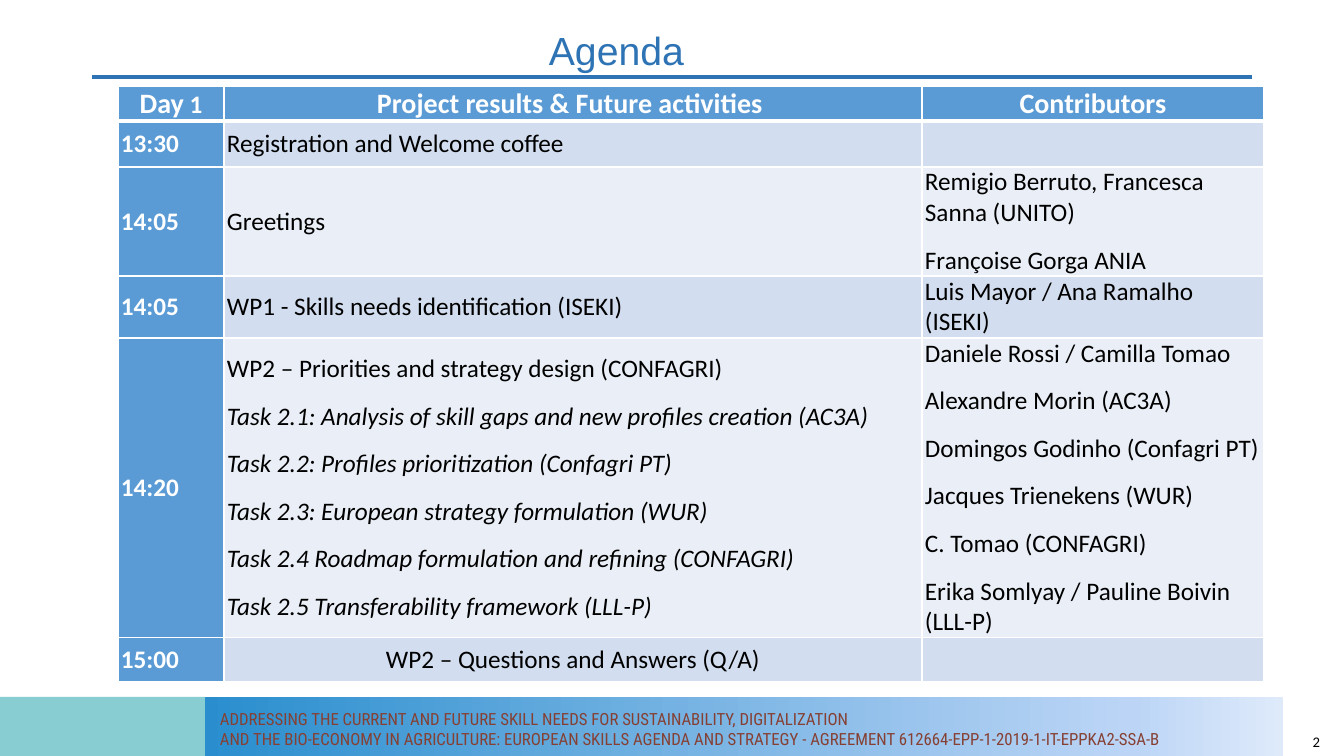
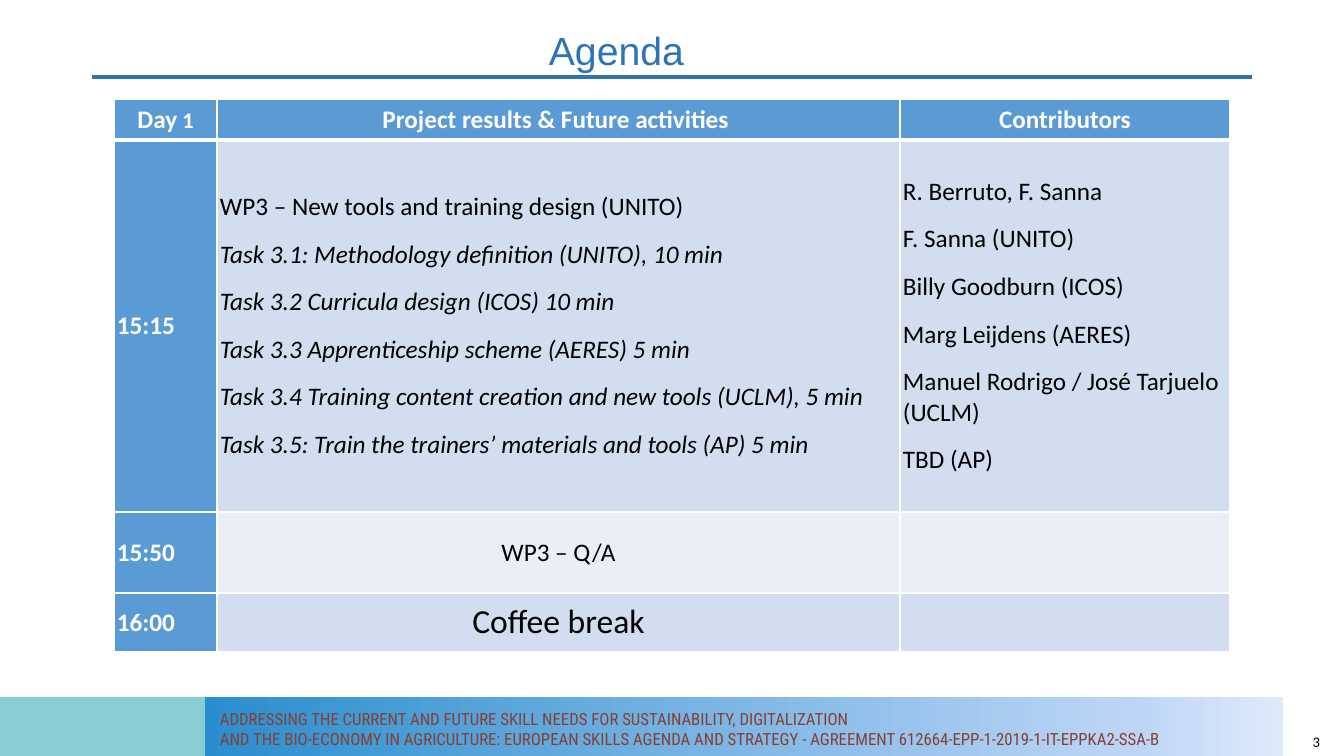
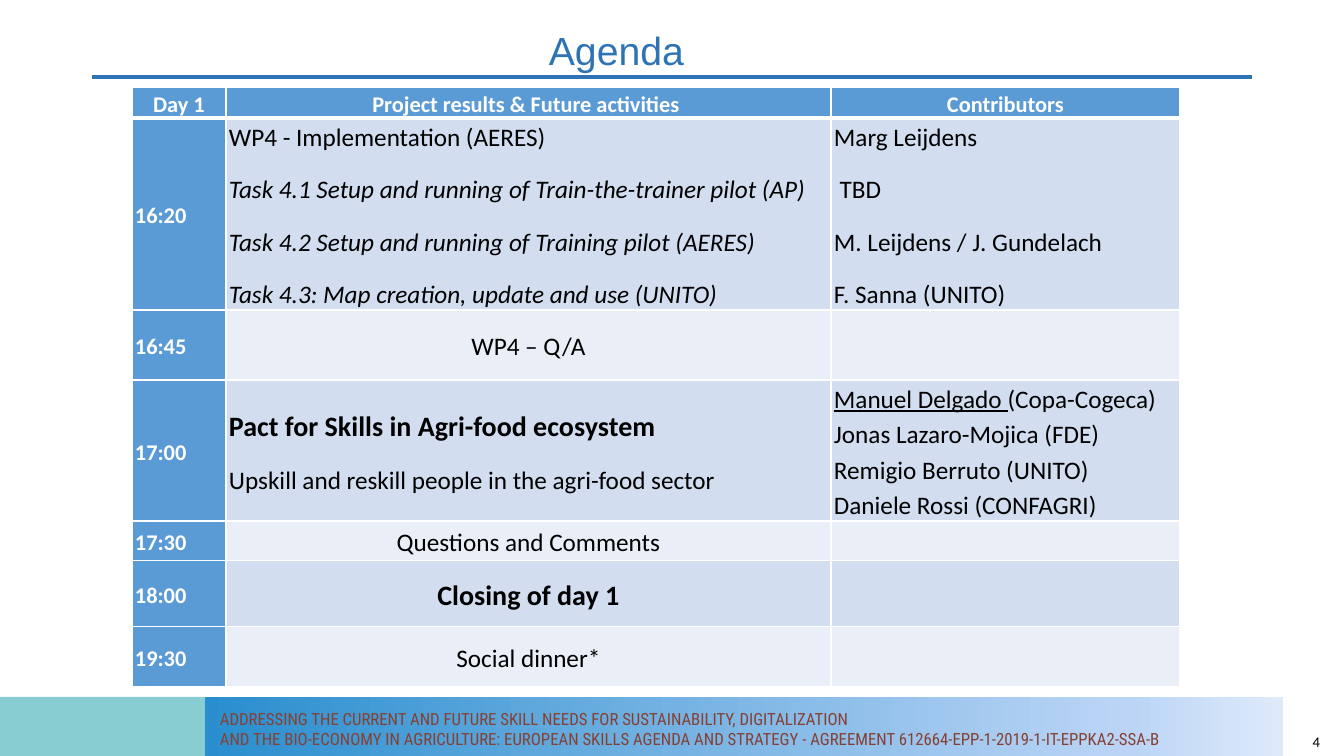
from dataclasses import dataclass

from lxml import etree
from pptx import Presentation
from pptx.dml.color import RGBColor
from pptx.enum.shapes import MSO_CONNECTOR, MSO_SHAPE
from pptx.enum.text import MSO_ANCHOR, PP_ALIGN
from pptx.oxml.ns import qn
from pptx.util import Emu, Pt

RECTANGLE = MSO_SHAPE.RECTANGLE
STRAIGHT = MSO_CONNECTOR.STRAIGHT
LEFT, CENTER, RIGHT = PP_ALIGN.LEFT, PP_ALIGN.CENTER, PP_ALIGN.RIGHT
TOP, MIDDLE = MSO_ANCHOR.TOP, MSO_ANCHOR.MIDDLE

EMU_PER_PX = 914400 / 100.8
SLIDE_SIZE = (1344, 756)
COLORS = {
    "title": "2E74B5",
    "teal": "87CDD1",
    "footer_text": "864033",
    "header": "5B9BD5",
    "band_dark": "D2DEEF",
    "band_light": "EAEFF7",
    "white": "FFFFFF",
    "black": "000000",
}
FOOTER_GRADIENT = [(0, "2A8ECE"), (86, "BCD5F6"), (100, "DEEAFA")]
FOOTER_LINES = [
    "ADDRESSING THE CURRENT AND FUTURE SKILL NEEDS FOR SUSTAINABILITY, DIGITALIZATION",
    "AND THE BIO-ECONOMY IN AGRICULTURE: EUROPEAN SKILLS AGENDA AND STRATEGY"
    " - AGREEMENT 612664-EPP-1-2019-1-IT-EPPKA2-SSA-B",
]
BODY_FONT = "Calibri"
PARAGRAPH_GAP = 12
CELL_MARGIN = 3
HANGING_INDENT = 58


@dataclass
class Line:
    """One paragraph of a table cell, with an optional plain tail."""
    text: str
    size: float = 18
    bold: bool = False
    italic: bool = False
    underline: bool = False
    tail: str = ""
    tail_size: float = 18
    tight: bool = False


@dataclass
class Session:
    """One agenda row."""
    height: int
    time: str
    topics: list
    people: list
    centered: bool = False


@dataclass
class Agenda:
    """One agenda table."""
    left: int
    top: int
    columns: list
    header_height: int
    header_size: float
    day_number_size: float
    time_size: float
    sessions: list
    line_spacing: float = 1.0
    header_anchor: int = MIDDLE


def px(length):
    return Emu(round(length * EMU_PER_PX))


def rgb(name):
    return RGBColor.from_string(COLORS[name])


def lines(*texts):
    return [Line(text) for text in texts]


def tasks(heading, *texts):
    return [Line(heading)] + [Line(text, italic=True) for text in texts]


def break_row(height, time, text, **style):
    return Session(height, time, [Line(text, **style)], [], centered=True)


# Shared frame
def add_text(slide, box, texts, font, size, color, align=LEFT, anchor=TOP, spacing=1.0):
    shape = slide.shapes.add_textbox(*map(px, box))
    frame = shape.text_frame
    frame.word_wrap = True
    frame.vertical_anchor = anchor
    frame.text = "\n".join(texts)
    for paragraph in frame.paragraphs:
        paragraph.alignment = align
        paragraph.line_spacing = spacing
        for run in paragraph.runs:
            run.font.name = font
            run.font.size = Pt(size)
            run.font.color.rgb = rgb(color)


def add_band(slide, box):
    shape = slide.shapes.add_shape(RECTANGLE, *map(px, box))
    shape.shadow.inherit = False
    shape.line.fill.background()
    return shape


def set_gradient(shape, stops):
    shape.fill.gradient()
    shape.fill.gradient_angle = 0
    stop_list = shape._element.spPr.find(".//" + qn("a:gsLst"))
    for stop in list(stop_list):
        stop_list.remove(stop)
    for percent, color in stops:
        stop = etree.SubElement(stop_list, qn("a:gs"), pos=str(percent * 1000))
        etree.SubElement(stop, qn("a:srgbClr"), val=color)


def add_frame(slide, number):
    rule = slide.shapes.add_connector(STRAIGHT, px(92), px(77), px(1252), px(77))
    rule.line.color.rgb = rgb("title")
    rule.line.width = Pt(2.25)
    etree.SubElement(rule._element.spPr, qn("a:effectLst"))

    teal_band = add_band(slide, (0, 697, 205, 59))
    teal_band.fill.solid()
    teal_band.fill.fore_color.rgb = rgb("teal")
    set_gradient(add_band(slide, (205, 697, 1078, 59)), FOOTER_GRADIENT)
    add_text(slide, (210, 704, 1074, 50), FOOTER_LINES,
             "Roboto Condensed", 12, "footer_text")

    add_text(slide, (539, 27, 568, 59), ["Agenda"], "Arial", 28, "title", spacing=0.9)
    add_text(slide, (1028, 729, 302, 25), [str(number)], BODY_FONT, 10.5, "black",
             align=RIGHT, anchor=MIDDLE)


# Agenda table
def set_borders(cell, top, bottom):
    properties = cell._tc.get_or_add_tcPr()
    for side, width in (("L", 1), ("R", 1), ("T", top), ("B", bottom)):
        border = etree.SubElement(properties, qn("a:ln" + side), w=str(Pt(width)))
        fill = etree.SubElement(border, qn("a:solidFill"))
        etree.SubElement(fill, qn("a:srgbClr"), val=COLORS["white"])


def format_run(run, line, size, color):
    run.font.name = BODY_FONT
    run.font.size = Pt(size)
    run.font.bold = line.bold
    run.font.italic = line.italic
    run.font.color.rgb = rgb(color)


def fill_cell(cell, content, fill, color, align, spacing, anchor=MIDDLE, hanging=False):
    cell.fill.solid()
    cell.fill.fore_color.rgb = rgb(fill)
    cell.margin_left = cell.margin_right = px(CELL_MARGIN)
    cell.margin_top = cell.margin_bottom = 0
    cell.vertical_anchor = anchor
    frame = cell.text_frame
    for index, line in enumerate(content):
        paragraph = frame.add_paragraph() if index else frame.paragraphs[0]
        paragraph.text = line.text
        paragraph.alignment = align
        paragraph.line_spacing = spacing
        paragraph.space_before = Pt(PARAGRAPH_GAP if index and not line.tight else 0)
        if hanging:
            properties = paragraph._p.get_or_add_pPr()
            properties.set("marL", str(px(HANGING_INDENT)))
            properties.set("indent", str(-px(HANGING_INDENT)))
        run = paragraph.runs[0]
        format_run(run, line, line.size, color)
        run.font.underline = line.underline
        if line.tail:
            tail = paragraph.add_run()
            tail.text = line.tail
            format_run(tail, line, line.tail_size, color)


def add_agenda(slide, agenda):
    heights = [agenda.header_height] + [session.height for session in agenda.sessions]
    table = slide.shapes.add_table(
        len(heights), len(agenda.columns), px(agenda.left), px(agenda.top),
        px(sum(agenda.columns)), px(sum(heights))).table
    for column, width in zip(table.columns, agenda.columns):
        column.width = px(width)
    for index, (row, height) in enumerate(zip(table.rows, heights)):
        row.height = px(height)
        for cell in row.cells:
            set_borders(cell, 3 if index == 1 else 1, 1 if index else 3)

    size, spacing = agenda.header_size, agenda.line_spacing
    headings = [
        Line("Day", size, bold=True, tail=" 1", tail_size=agenda.day_number_size),
        Line("Project results & Future activities ", size, bold=True),
        Line("Contributors", size, bold=True),
    ]
    for cell, heading in zip(table.rows[0].cells, headings):
        fill_cell(cell, [heading], "header", "white", CENTER, spacing,
                  anchor=agenda.header_anchor)

    for index, session in enumerate(agenda.sessions):
        time, topics, people = table.rows[index + 1].cells
        band = "band_light" if index % 2 else "band_dark"
        fill_cell(time, [Line(session.time, agenda.time_size, bold=True)],
                  "header", "white", LEFT, spacing)
        fill_cell(topics, session.topics, band, "black",
                  CENTER if session.centered else LEFT, spacing, hanging=True)
        fill_cell(people, session.people, band, "black", LEFT, spacing)


# Content
AGENDAS = [
    Agenda(118, 86, [106, 698, 342], 35, 20, 18, 18, [
        Session(46, "13:30", lines("Registration and Welcome coffee"), []),
        Session(109, "14:05", lines("Greetings"),
                lines("Remigio Berruto, Francesca Sanna (UNITO)",
                      "Françoise Gorga ANIA")),
        Session(62, "14:05", lines("WP1 - Skills needs identification (ISEKI)"),
                lines("Luis Mayor / Ana Ramalho (ISEKI)")),
        Session(300, "14:20",
                tasks("WP2 – Priorities and strategy design (CONFAGRI)",
                      "Task 2.1: Analysis of skill gaps and new profiles creation (AC3A)",
                      "Task 2.2: Profiles prioritization (Confagri PT)",
                      "Task 2.3: European strategy formulation (WUR)",
                      "Task 2.4 Roadmap formulation and refining (CONFAGRI)",
                      "Task 2.5 Transferability framework (LLL-P)"),
                lines("Daniele Rossi / Camilla Tomao",
                      "Alexandre Morin (AC3A)",
                      "Domingos Godinho (Confagri PT)",
                      "Jacques Trienekens (WUR)",
                      "C. Tomao (CONFAGRI)",
                      "Erika Somlyay / Pauline Boivin (LLL-P)")),
        break_row(44, "15:00", "WP2 – Questions and Answers (Q/A)"),
    ]),
    Agenda(114, 99, [103, 683, 330], 41, 18, 16, 18, [
        Session(372, "15:15",
                tasks("WP3 – New tools and training design (UNITO)",
                      "Task 3.1: Methodology definition (UNITO), 10 min",
                      "Task 3.2 Curricula design (ICOS) 10 min",
                      "Task 3.3 Apprenticeship scheme (AERES) 5 min",
                      "Task 3.4 Training content creation and new tools (UCLM), 5 min",
                      "Task 3.5: Train the trainers’ materials and tools (AP) 5 min"),
                lines("R. Berruto, F. Sanna",
                      "F. Sanna (UNITO)",
                      "Billy Goodburn (ICOS)",
                      "Marg Leijdens (AERES)",
                      "Manuel Rodrigo / José Tarjuelo (UCLM)",
                      "TBD (AP)")),
        break_row(81, "15:50", "WP3 – Q/A"),
        break_row(59, "16:00", "Coffee break", size=24),
    ]),
    Agenda(132, 87, [94, 605, 349], 31, 16, 16, 16, [
        Session(192, "16:20",
                tasks("WP4 - Implementation (AERES)",
                      "Task 4.1 Setup and running of Train-the-trainer pilot (AP)",
                      "Task 4.2 Setup and running of Training pilot (AERES)",
                      "Task 4.3: Map creation, update and use (UNITO)"),
                lines("Marg Leijdens",
                      " TBD",
                      "M. Leijdens / J. Gundelach",
                      "F. Sanna (UNITO)")),
        break_row(70, "16:45", "WP4 – Q/A"),
        Session(141, "17:00",
                [Line("Pact for Skills in Agri-food ecosystem", 20, bold=True),
                 Line("Upskill and reskill people in the agri-food sector")],
                [Line("Manuel Delgado ", underline=True, tail="(Copa-Cogeca)"),
                 Line("Jonas Lazaro-Mojica (FDE)", tight=True),
                 Line("Remigio Berruto (UNITO)", tight=True),
                 Line("Daniele Rossi (CONFAGRI)", tight=True)]),
        break_row(40, "17:30", "Questions and Comments"),
        break_row(66, "18:00", "Closing of day 1", size=20, bold=True),
        break_row(60, "19:30", "Social dinner*"),
    ], line_spacing=1.15, header_anchor=TOP),
]


def main():
    presentation = Presentation()
    presentation.slide_width, presentation.slide_height = map(px, SLIDE_SIZE)
    blank_layout = presentation.slide_layouts[6]
    for number, agenda in enumerate(AGENDAS, start=2):
        slide = presentation.slides.add_slide(blank_layout)
        add_frame(slide, number)
        add_agenda(slide, agenda)
    presentation.save("out.pptx")


if __name__ == "__main__":
    main()
